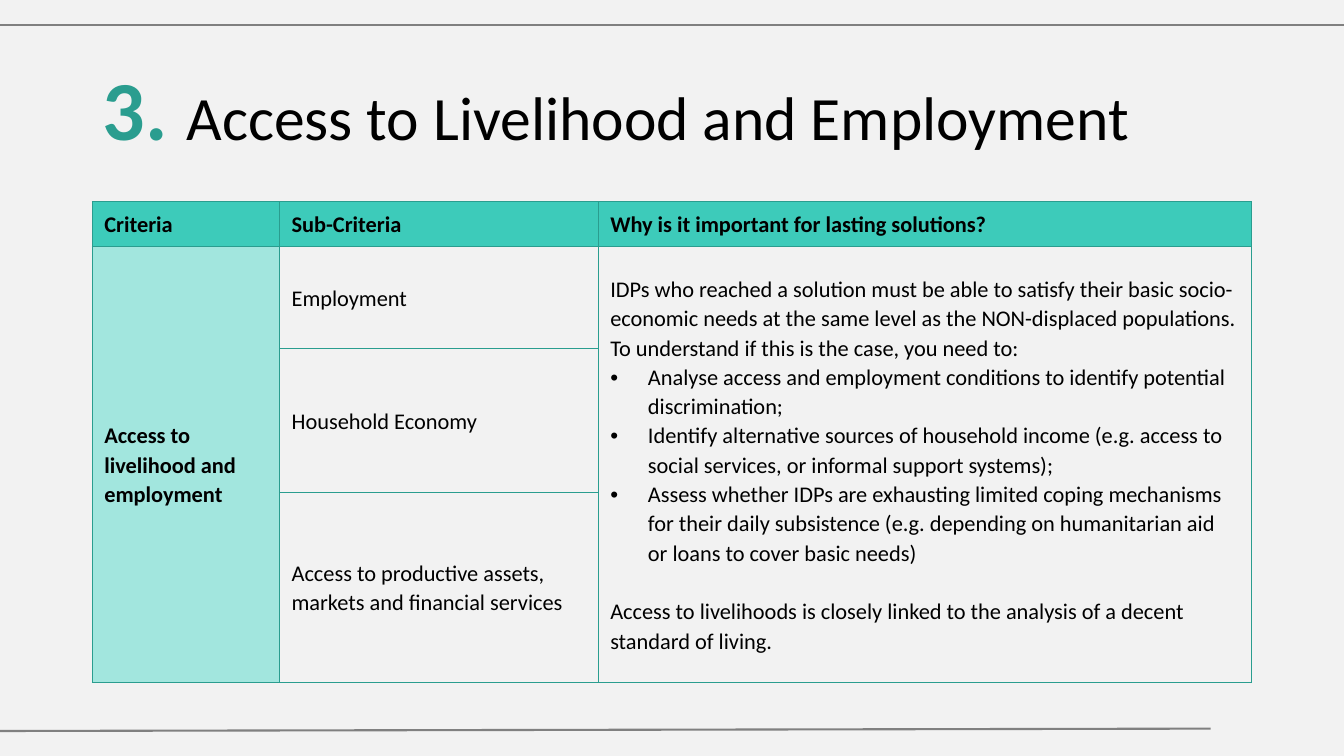
from lxml import etree
from pptx import Presentation
from pptx import util as u
from pptx.dml.color import RGBColor
from pptx.enum import shapes, text
from pptx.oxml.ns import qn

BACKGROUND = RGBColor(0xF2, 0xF2, 0xF2)
RULE_GREY = RGBColor(0x80, 0x80, 0x80)
TEAL = RGBColor(0x2A, 0x9D, 0x8F)
HEADER_TEAL = RGBColor(0x3D, 0xCB, 0xBA)
PALE_TEAL = RGBColor(0xA2, 0xE6, 0xDE)
BLACK = RGBColor(0, 0, 0)
FONT = "Calibri"

HEADERS = ["Criteria", "Sub-Criteria", "Why is it important for lasting solutions?"]
CRITERION = "Access to livelihood and employment"
SUB_CRITERIA = [
    "Employment",
    "Household Economy",
    "Access to productive assets, markets and financial services",
]
INTRO = (
    "IDPs who reached a solution must be able to satisfy their basic socio-economic needs "
    "at the same level as the NON-displaced populations. To understand if this is the case, "
    "you need to:"
)
ACTIONS = [
    "Analyse access and employment conditions to identify potential discrimination;",
    "Identify alternative sources of household income (e.g. access to social services, "
    "or informal support systems);",
    "Assess whether IDPs are exhausting limited coping mechanisms for their daily subsistence "
    "(e.g. depending on humanitarian aid or loans to cover basic needs)",
]
CLOSING = (
    "Access to livelihoods is closely linked to the analysis of a decent standard of living."
)
COLUMN_WIDTHS = [4.72, 8.03, 16.46]
ROW_HEIGHTS = [1.12, 2.57, 3.63, 4.78]


def style_font(font, size, color, bold=False):
    font.name = FONT
    font.size = u.Pt(size)
    font.bold = bold
    font.color.rgb = color


def add_rule(page, left, top, right, bottom):
    rule = page.shapes.add_connector(
        shapes.MSO_CONNECTOR.STRAIGHT, u.Cm(left), u.Cm(top), u.Cm(right), u.Cm(bottom)
    )
    rule.line.color.rgb = RULE_GREY
    rule.line.width = u.Pt(1.5)
    etree.SubElement(rule.element.spPr, qn("a:effectLst"))


def add_title(page, left, top, width, height):
    title = page.shapes.title
    title.left, title.top = u.Cm(left), u.Cm(top)
    title.width, title.height = u.Cm(width), u.Cm(height)
    frame = title.text_frame
    frame.word_wrap = True
    frame.auto_size = text.MSO_AUTO_SIZE.NONE
    frame.vertical_anchor = text.MSO_ANCHOR.MIDDLE
    para = frame.paragraphs[0]
    para.alignment = text.PP_ALIGN.LEFT
    para.line_spacing = 0.9
    number, heading = para.add_run(), para.add_run()
    number.text = "3. "
    style_font(number.font, 60, TEAL, bold=True)
    heading.text = "Access to Livelihood and Employment"
    style_font(heading.font, 44, BLACK)


def add_bullet(para):
    properties = para._p.get_or_add_pPr()
    properties.set("marL", str(u.Cm(0.95)))
    properties.set("indent", str(-u.Cm(0.95)))
    etree.SubElement(properties, qn("a:buFont"), typeface="Arial")
    etree.SubElement(properties, qn("a:buChar"), char="•")


def add_borders(cell):
    properties = cell._tc.get_or_add_tcPr()
    for index, side in enumerate(["lnL", "lnR", "lnT", "lnB"]):
        border = etree.Element(qn(f"a:{side}"), w=str(u.Pt(1)))
        fill = etree.SubElement(border, qn("a:solidFill"))
        etree.SubElement(fill, qn("a:srgbClr"), val=str(TEAL))
        properties.insert(index, border)


def format_cell(cell, color=None):
    """Apply fill, margins and borders; a cell without a colour stays clear."""
    if color is None:
        cell.fill.background()
    else:
        cell.fill.solid()
        cell.fill.fore_color.rgb = color
    add_borders(cell)
    cell.vertical_anchor = text.MSO_ANCHOR.MIDDLE
    cell.margin_left = cell.margin_right = u.Cm(0.3)
    cell.margin_top = cell.margin_bottom = u.Cm(0.2)


def write_cell(cell, lines, bold=False, space_after=8):
    cell.text_frame.text = "\n".join(lines)
    for para in cell.text_frame.paragraphs:
        para.line_spacing = 1.07
        para.space_after = u.Pt(space_after)
        for span in para.runs:
            style_font(span.font, 16, BLACK, bold)


def write_reasons(cell):
    write_cell(cell, [INTRO, *ACTIONS, CLOSING], space_after=0)
    paras = cell.text_frame.paragraphs
    for para in paras[1:-1]:
        add_bullet(para)
    paras[-1].space_before = u.Pt(21)


def add_criteria_table(page, left, top, width, height):
    frame = page.shapes.add_table(
        len(ROW_HEIGHTS), len(COLUMN_WIDTHS), u.Cm(left), u.Cm(top), u.Cm(width), u.Cm(height)
    )
    table = frame.table
    table.first_row = table.horz_banding = False
    for column, column_width in zip(table.columns, COLUMN_WIDTHS):
        column.width = u.Cm(column_width)
    for row, row_height in zip(table.rows, ROW_HEIGHTS):
        row.height = u.Cm(row_height)

    for index, header in enumerate(HEADERS):
        format_cell(table.cell(0, index), HEADER_TEAL)
        write_cell(table.cell(0, index), [header], bold=True)
    for index, name in enumerate(SUB_CRITERIA, start=1):
        for column, color in enumerate([PALE_TEAL, None, None]):
            format_cell(table.cell(index, column), color)
        write_cell(table.cell(index, 1), [name])
    for column in (0, 2):
        table.cell(1, column).merge(table.cell(3, column))
    write_cell(table.cell(1, 0), [CRITERION], bold=True)
    write_reasons(table.cell(1, 2))


def build_criteria_slide(deck):
    page = deck.slides.add_slide(deck.slide_layouts.get_by_name("Title Only"))
    page.background.fill.solid()
    page.background.fill.fore_color.rgb = BACKGROUND
    add_rule(page, 0, 0.64, 33.87, 0.64)
    add_rule(page, 0, 18.42, 30.51, 18.36)
    add_title(page, 2.33, 1.02, 29.21, 3.68)
    add_criteria_table(page, 2.33, 5.08, sum(COLUMN_WIDTHS), sum(ROW_HEIGHTS))


def main():
    deck = Presentation()
    deck.slide_width, deck.slide_height = u.Cm(33.87), u.Cm(19.05)
    build_criteria_slide(deck)
    deck.save("out.pptx")


if __name__ == "__main__":
    main()
